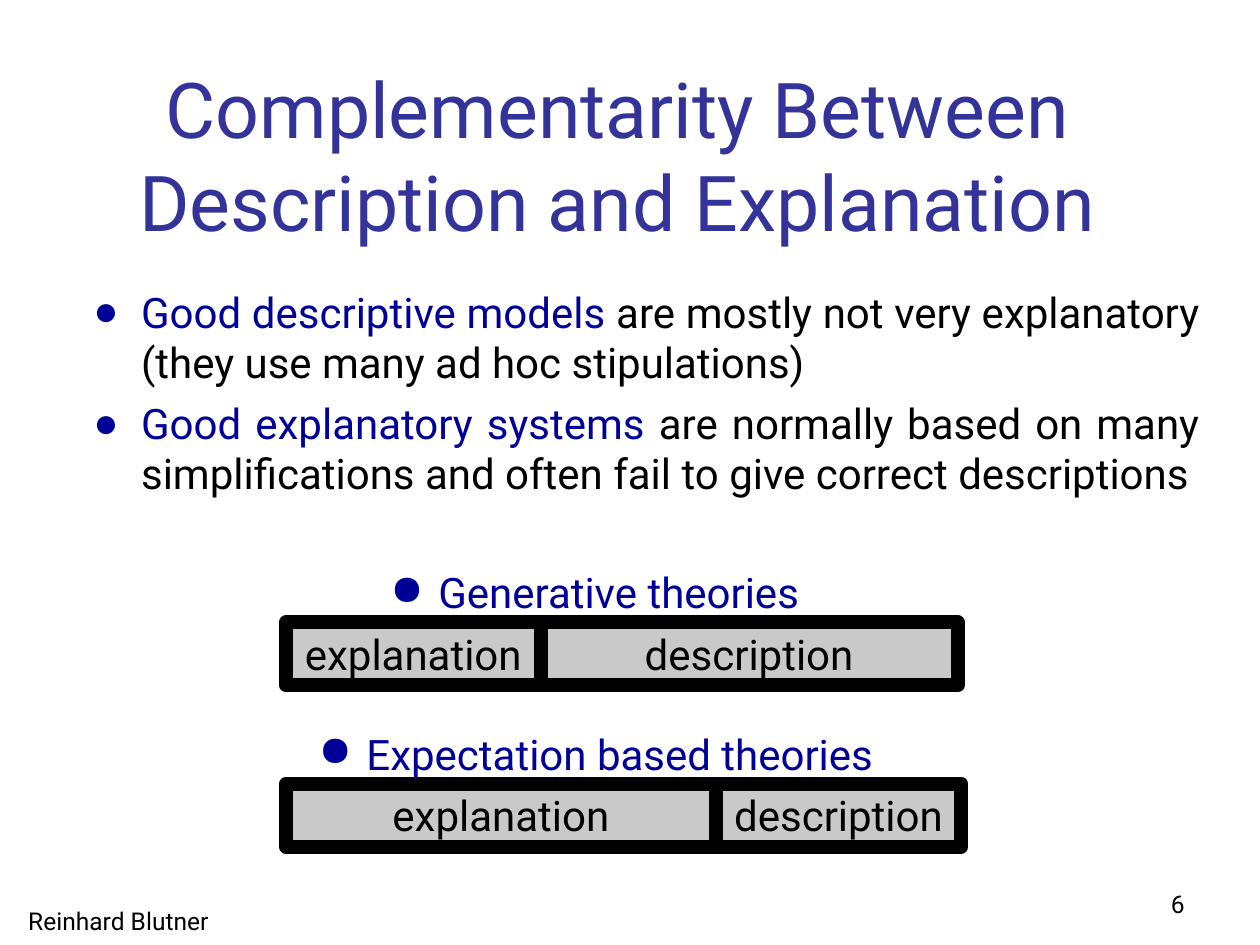
import pptx
import pptx.util
import pptx.dml.color
import pptx.enum.text
import pptx.enum.shapes
from lxml import etree

Inches, Pt = pptx.util.Inches, pptx.util.Pt
RGBColor = pptx.dml.color.RGBColor
ALIGN = pptx.enum.text.PP_ALIGN
ANCHOR = pptx.enum.text.MSO_ANCHOR
RECT = pptx.enum.shapes.MSO_SHAPE.RECTANGLE
NS = "http://schemas.openxmlformats.org/drawingml/2006/main"

BLACK = RGBColor(0, 0, 0)
NAVY = RGBColor(0x00, 0x00, 0x99)
INDIGO = RGBColor(0x33, 0x33, 0x99)
GRAY = RGBColor(0x40, 0x40, 0x40)

# Content: paragraphs are lists of (text, colour) runs
TITLE = [[("Complementarity Between Description and Explanation", INDIGO)]]
POINTS = [
    [("Good descriptive models ", NAVY),
     ("are mostly not very explanatory (they use many ad hoc stipulations)", BLACK)],
    [("Good explanatory systems ", NAVY),
     ("are normally based on many simplifications and often fail to give "
      "correct descriptions ", BLACK)],
]
# label, label left, label width, top, bar parts with widths
BARS = [
    ("Generative theories", 2.99, 3.65, 4.45,
     [("explanation", 2.02), ("description", 3.31)]),
    ("Expectation based theories", 2.42, 5.06, 5.73,
     [("explanation", 3.41), ("description", 1.95)]),
]
# text, box, alignment
NOTES = [
    ("Reinhard Blutner", (0, 7.14, 1.88, 0.36), ALIGN.CENTER),
    ("6", (7.17, 7.01, 2.33, 0.45), ALIGN.RIGHT),
]
BAR_X, BAR_H, DROP = 2.27, 0.5, 0.49


def add_tag(node, name, **attrs):
    return etree.SubElement(node, "{%s}%s" % (NS, name), attrs)


def place(shape, box):
    for name, val in zip(("left", "top", "width", "height"), box):
        setattr(shape, name, Inches(val))


def add_bullet(para):
    props = para._p.get_or_add_pPr()
    props.set("marL", str(Inches(0.39)))
    props.set("indent", str(Inches(-0.38)))
    add_tag(props, "buChar", char="●")
    tabs = add_tag(props, "tabLst")
    add_tag(tabs, "tab", pos=str(Inches(0.59)), algn="l")


def write(shape, paras, size, align, anchor=ANCHOR.TOP, bullet=False):
    frame = shape.text_frame
    look = {"word_wrap": True, "vertical_anchor": anchor,
            "auto_size": pptx.enum.text.MSO_AUTO_SIZE.NONE}
    for name, val in look.items():
        setattr(frame, name, val)
    for i, runs in enumerate(paras):
        para = frame.add_paragraph() if i else frame.paragraphs[0]
        look = {"alignment": align, "line_spacing": 1.0,
                "space_before": Pt(0), "space_after": Pt(6 if bullet else 0)}
        for name, val in look.items():
            setattr(para, name, val)
        if bullet:
            add_bullet(para)
        for text, color in runs:
            run = para.add_run()
            run.text = text
            for name, val in {"name": "Roboto", "size": Pt(size)}.items():
                setattr(run.font, name, val)
            run.font.color.rgb = color


def add_part(group, text, box):
    part = group.shapes.add_shape(RECT, *map(Inches, box))
    part.shadow.inherit = False
    part.fill.solid()
    part.fill.fore_color.rgb = GRAY
    shade = part.fill._xPr.find(".//{%s}srgbClr" % NS)
    add_tag(shade, "alpha", val="28000")
    part.line.color.rgb = BLACK
    part.line.width = Pt(8)
    write(part, [[(text, BLACK)]], 24, ALIGN.CENTER)


def main():
    deck = pptx.Presentation()
    deck.slide_width, deck.slide_height = Inches(10), Inches(7.5)
    slide = deck.slides.add_slide(deck.slide_layouts[1])

    # Title and main points
    title, body = slide.placeholders
    place(title, (0.51, 0.38, 8.79, 1.69))
    write(title, TITLE, 44, ALIGN.CENTER, ANCHOR.MIDDLE)
    place(body, (0.63, 2.22, 8.99, 1.8))
    write(body, POINTS, 24, ALIGN.JUSTIFY, bullet=True)

    # Labelled bars, parts laid end to end
    for label, left, width, top, parts in BARS:
        group = slide.shapes.add_group_shape()
        x = BAR_X
        for text, span in parts:
            add_part(group, text, (x, top + DROP, span, BAR_H))
            x += span
        head = group.shapes.add_textbox(*map(Inches, (left, top, width, BAR_H)))
        write(head, [[(label, NAVY)]], 24, ALIGN.JUSTIFY, bullet=True)

    # Author and page number
    for text, box, align in NOTES:
        note = slide.shapes.add_textbox(*map(Inches, box))
        write(note, [[(text, BLACK)]], 14, align)

    deck.save("out.pptx")


if __name__ == "__main__":
    main()
